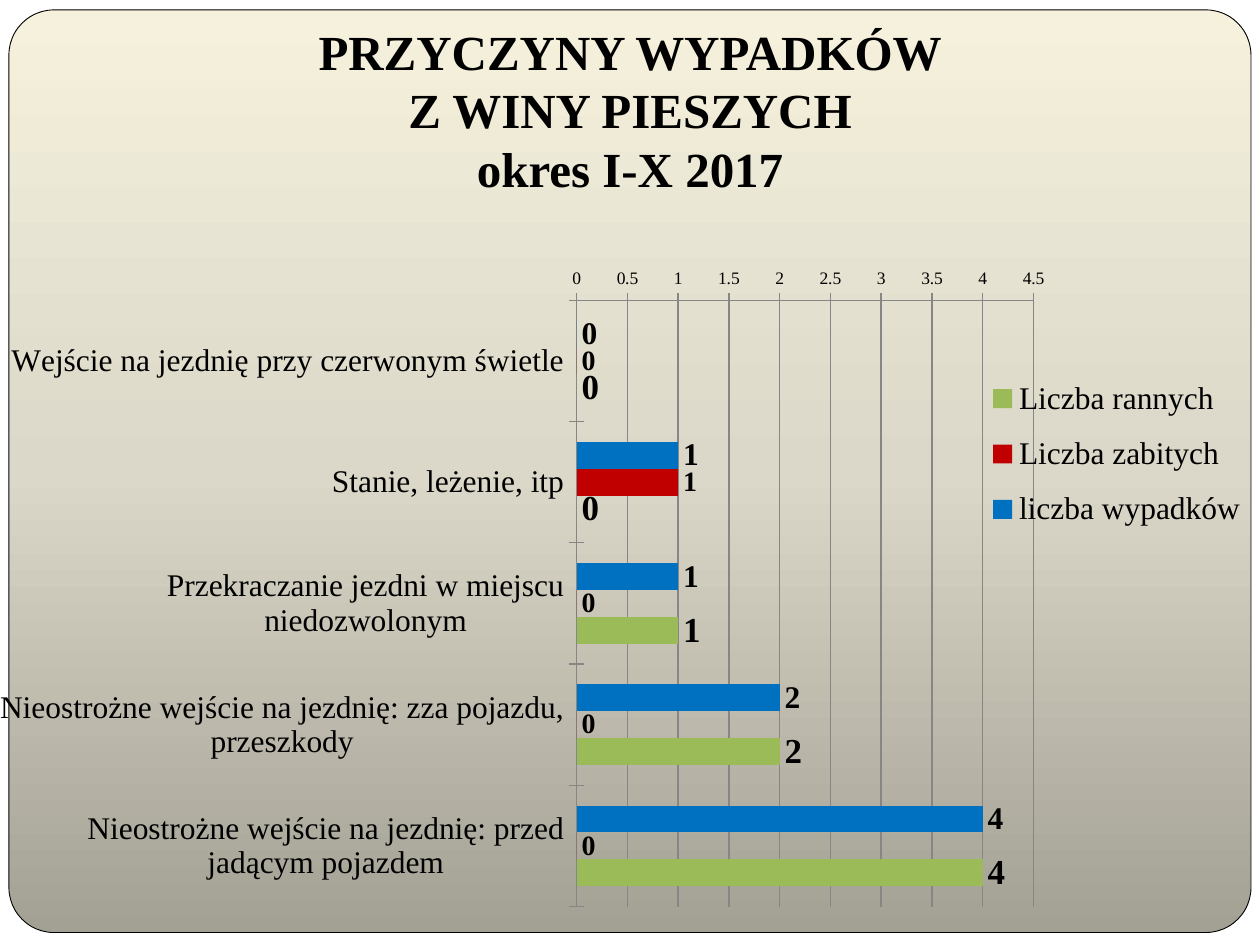
from lxml import etree
from copy import deepcopy
from pptx import Presentation
from pptx.chart.data import CategoryChartData
from pptx.dml.color import RGBColor
from pptx.enum.chart import XL_CHART_TYPE, XL_LABEL_POSITION, XL_LEGEND_POSITION, XL_TICK_MARK
from pptx.enum.shapes import MSO_SHAPE
from pptx.enum.text import MSO_ANCHOR, MSO_AUTO_SIZE, PP_ALIGN
from pptx.oxml.ns import qn
from pptx.util import Cm, Pt

BAR_CLUSTERED = XL_CHART_TYPE.BAR_CLUSTERED
OUTSIDE_END = XL_LABEL_POSITION.OUTSIDE_END
LEGEND_RIGHT = XL_LEGEND_POSITION.RIGHT
TICK_CROSS, TICK_OUTSIDE = XL_TICK_MARK.CROSS, XL_TICK_MARK.OUTSIDE
ROUNDED_RECTANGLE = MSO_SHAPE.ROUNDED_RECTANGLE
ANCHOR_MIDDLE = MSO_ANCHOR.MIDDLE
NO_AUTO_SIZE = MSO_AUTO_SIZE.NONE
ALIGN_CENTER = PP_ALIGN.CENTER

BLACK = RGBColor(0x00, 0x00, 0x00)
WHITE = RGBColor(0xFF, 0xFF, 0xFF)
GRAY = RGBColor(0x86, 0x86, 0x86)
BLUE = RGBColor(0x00, 0x70, 0xC0)
RED = RGBColor(0xC0, 0x00, 0x00)
GREEN = RGBColor(0x9B, 0xBB, 0x59)
PANEL_STOPS = [
    (0, RGBColor(0xA3, 0xA0, 0x94)),
    (0.5, RGBColor(0xDB, 0xD8, 0xC9)),
    (1, RGBColor(0xF5, 0xF1, 0xDC)),
]
FONT = "Times New Roman"

TITLE = "PRZYCZYNY WYPADKÓW\vZ WINY PIESZYCH\vokres I-X 2017"
CATEGORIES = [
    "Wejście na jezdnię przy czerwonym świetle",
    "Stanie, leżenie, itp",
    "Przekraczanie jezdni w miejscu niedozwolonym",
    "Nieostrożne wejście na jezdnię: zza pojazdu, przeszkody",
    "Nieostrożne wejście na jezdnię: przed jadącym pojazdem",
]
# name, values, bar colour, label size
SERIES = [
    ("liczba wypadków", (0, 1, 1, 2, 4), BLUE, 18),
    ("Liczba zabitych", (0, 1, 0, 0, 0), RED, 16),
    ("Liczba rannych", (0, 0, 1, 2, 4), GREEN, 20),
]


def set_font(font, size, bold=False):
    font.name = FONT
    font.size = Pt(size)
    font.bold = bold
    font.color.rgb = BLACK


def set_gradient(fill, stops):
    """Fill from bottom to top with any number of stops."""
    fill.gradient()
    fill.gradient_angle = 90
    first_stop = fill.gradient_stops[0]._gs
    for _ in range(len(stops) - len(fill.gradient_stops)):
        first_stop.addnext(deepcopy(first_stop))
    for stop, (position, color) in zip(fill.gradient_stops, stops):
        stop.position = position
        stop.color.rgb = color


def add_panel(slide):
    panel = slide.shapes.add_shape(
        ROUNDED_RECTANGLE, Cm(0.18), Cm(0.2), Cm(25.04), Cm(18.6))
    panel.adjustments[0] = 0.049
    panel.shadow.inherit = False
    set_gradient(panel.fill, PANEL_STOPS)
    panel.line.color.rgb = BLACK
    panel.line.width = Pt(0.5)
    slide.shapes._spTree.insert(2, panel._element)  # behind the title


def format_title(title):
    title.left, title.top, title.width, title.height = Cm(0), Cm(0.91), Cm(25.4), Cm(2.59)
    text_frame = title.text_frame
    text_frame.text = TITLE
    text_frame.auto_size = NO_AUTO_SIZE
    text_frame.vertical_anchor = ANCHOR_MIDDLE
    paragraph = text_frame.paragraphs[0]
    paragraph.alignment = ALIGN_CENTER
    for run in paragraph.runs:
        set_font(run.font, 28, bold=True)


def make_layout(x, y, width, height, inner=False):
    """Manual chart layout in fractions of the chart area."""
    layout = etree.Element(qn("c:layout"))
    manual = etree.SubElement(layout, qn("c:manualLayout"))
    settings = [("xMode", "edge"), ("yMode", "edge"),
                ("x", x), ("y", y), ("w", width), ("h", height)]
    if inner:
        settings.insert(0, ("layoutTarget", "inner"))
    for tag, value in settings:
        etree.SubElement(manual, qn(f"c:{tag}")).set("val", str(value))
    return layout


def remove_layout(element):
    for layout in element.findall(qn("c:layout")):
        element.remove(layout)


def format_axes(chart):
    category_axis, value_axis = chart.category_axis, chart.value_axis
    category_axis.reverse_order = True
    category_axis.major_tick_mark = TICK_CROSS
    value_axis.major_tick_mark = TICK_OUTSIDE
    value_axis.minimum_scale, value_axis.maximum_scale = 0, 4.5
    value_axis.major_unit = 0.5
    value_axis.has_major_gridlines = True
    set_font(category_axis.tick_labels.font, 18)
    set_font(value_axis.tick_labels.font, 10)
    for axis_part in (category_axis, value_axis, value_axis.major_gridlines):
        axis_part.format.line.color.rgb = GRAY
        axis_part.format.line.width = Pt(0.75)


def format_series(series, color, label_size):
    series.format.fill.solid()
    series.format.fill.fore_color.rgb = color
    labels = series.data_labels
    labels.show_value = True
    labels.position = OUTSIDE_END
    set_font(labels.font, label_size, bold=True)


def format_legend(chart):
    chart.has_legend = True
    legend = chart.legend
    legend.position = LEGEND_RIGHT
    legend.include_in_layout = False
    set_font(legend.font, 18)
    element = legend._element
    remove_layout(element)
    element.find(qn("c:legendPos")).addnext(make_layout(0.8, 0.22, 0.2, 0.25))


def add_causes_chart(slide):
    data = CategoryChartData()
    data.categories = CATEGORIES
    for name, values, _, _ in SERIES:
        data.add_series(name, values)
    chart = slide.shapes.add_chart(
        BAR_CLUSTERED, Cm(0), Cm(3.94), Cm(25.4), Cm(15.11), data).chart
    chart.has_title = False
    set_font(chart.font, 18)
    plot = chart.plots[0]
    plot.gap_width = 150
    plot.vary_by_categories = False
    for series, (_, _, color, label_size) in zip(plot.series, SERIES):
        format_series(series, color, label_size)
    format_axes(chart)
    format_legend(chart)
    plot_area = chart._chartSpace.chart.plotArea
    remove_layout(plot_area)
    plot_area.insert(0, make_layout(0.457, 0.14, 0.363, 0.809, inner=True))


def main():
    presentation = Presentation()
    presentation.slide_width, presentation.slide_height = Cm(25.4), Cm(19.05)
    slide = presentation.slides.add_slide(presentation.slide_layouts[5])
    slide.background.fill.solid()
    slide.background.fill.fore_color.rgb = WHITE
    add_panel(slide)
    format_title(slide.shapes.title)
    add_causes_chart(slide)
    presentation.save("out.pptx")


if __name__ == "__main__":
    main()
